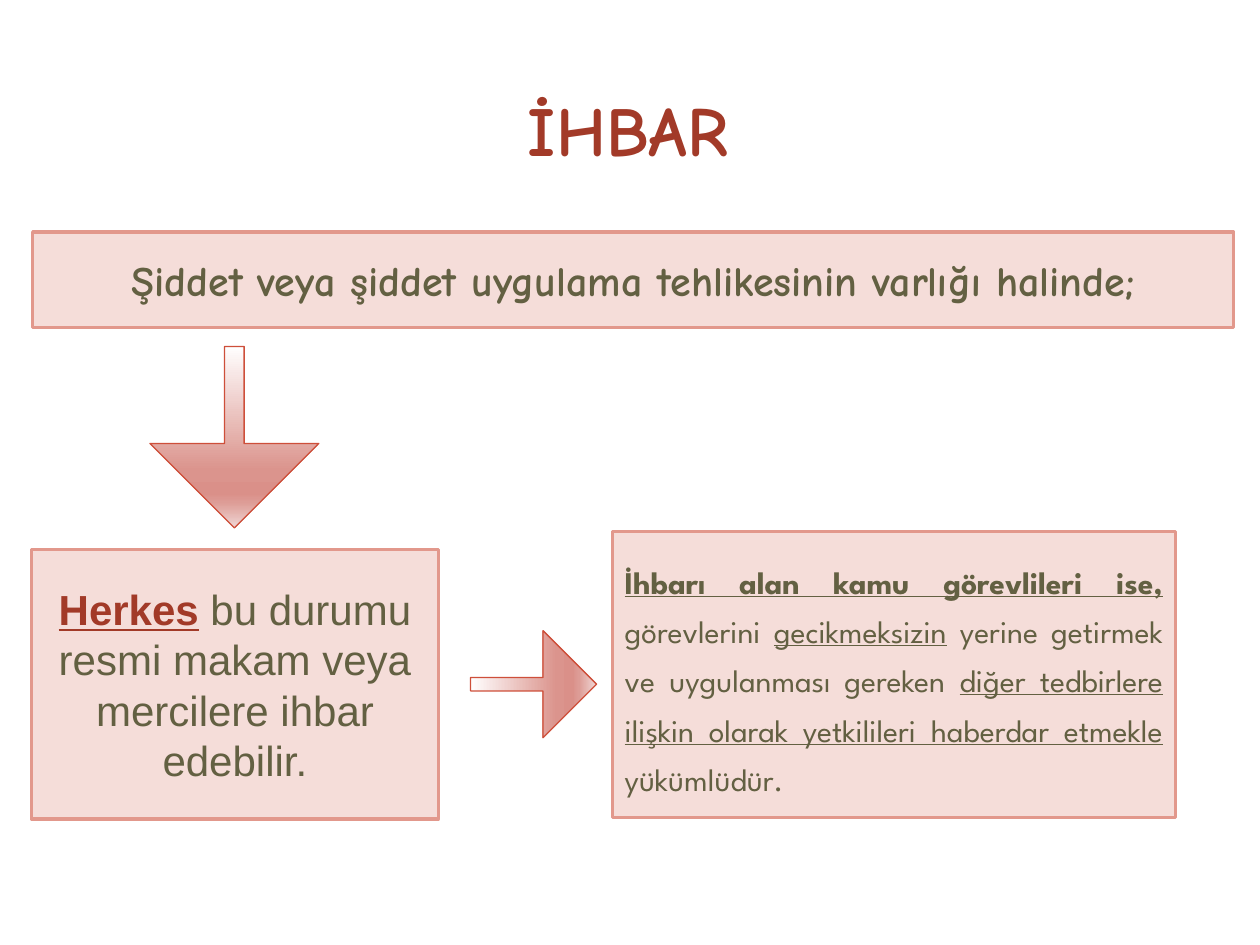
from dataclasses import dataclass

from lxml import etree
from pptx import Presentation
from pptx import util as u
from pptx.dml.color import RGBColor
from pptx.enum import shapes, text
from pptx.oxml.ns import qn

COLS, ROWS = 100, 75  # grid of the slide


@dataclass(frozen=True)
class Theme:
    accent: str = "A23A28"
    ink: str = "636042"
    panel: str = "F5DDD9"
    border: str = "E2988C"
    arrow_line: str = "CE4F3A"
    arrow_stops: tuple = ((0, "FFFEFE"), (68, "DB948D"), (81, "DA9089"),
                          (86, "DD9C96"), (100, "F0D7D5"))
    display: str = "Comic Neue"
    plain: str = "Arial"
    detail: str = "League Spartan"
    title_size: int = 40
    body_size: int = 24
    detail_size: int = 18


THEME = Theme()


@dataclass(frozen=True)
class Box:
    """Column, row, width and height in grid units."""
    x: float
    y: float
    w: float
    h: float

    def emu(self, prs):
        cw, rh = prs.slide_width / COLS, prs.slide_height / ROWS
        return [round(v) for v in (self.x * cw, self.y * rh, self.w * cw, self.h * rh)]


def rgb(value):
    return RGBColor.from_string(value)


def style(font, name, size, color, bold=None):
    font.name, font.size, font.bold = name, u.Pt(size), bold
    font.color.rgb = rgb(color)


def add_title(prs, slide, box, words):
    sp = slide.shapes.title
    sp.left, sp.top, sp.width, sp.height = box.emu(prs)
    tf = sp.text_frame
    tf.text = words
    tf.vertical_anchor = text.MSO_ANCHOR.MIDDLE
    p = tf.paragraphs[0]
    p.alignment = text.PP_ALIGN.CENTER
    style(p.font, THEME.display, THEME.title_size, THEME.accent, True)


def add_panel(prs, slide, box, runs, font, size, align=text.PP_ALIGN.CENTER,
              spacing=None):
    """Bordered panel; each run is its words and a dict of font overrides."""
    sp = slide.shapes.add_shape(shapes.MSO_SHAPE.RECTANGLE, *box.emu(prs))
    sp.shadow.inherit = False
    sp.fill.solid()
    sp.fill.fore_color.rgb = rgb(THEME.panel)
    sp.line.color.rgb = rgb(THEME.border)
    sp.line.width = u.Pt(2)
    tf = sp.text_frame
    tf.word_wrap = True
    tf.vertical_anchor = text.MSO_ANCHOR.MIDDLE
    p = tf.paragraphs[0]
    p.alignment, p.line_spacing = align, spacing
    style(p.font, font, size, THEME.ink)
    for words, look in runs:
        r = p.add_run()
        r.text = words
        style(r.font, font, size, look.get("color", THEME.ink), look.get("bold", False))
        r.font.underline = look.get("underline", False)


def add_arrow(prs, slide, box, shaft, rotation=0):
    sp = slide.shapes.add_shape(shapes.MSO_SHAPE.DOWN_ARROW, *box.emu(prs))
    sp.shadow.inherit = False
    sp.adjustments[0], sp.adjustments[1] = shaft, 0.5
    sp.rotation = rotation
    sp.line.color.rgb = rgb(THEME.arrow_line)
    sp.line.width = u.Pt(0.75)
    sp.fill.gradient()
    sp.fill.gradient_angle = 270
    stops = sp.element.spPr.find(".//" + qn("a:gsLst"))
    for old in list(stops):
        stops.remove(old)
    for share, color in THEME.arrow_stops:
        stop = etree.SubElement(stops, qn("a:gs"), pos=str(share * 1000))
        etree.SubElement(stop, qn("a:srgbClr"), val=color)


def build_slide(prs):
    slide = prs.slides.add_slide(prs.slide_layouts[5])
    strong = {"bold": True, "underline": True}
    under = {"underline": True}

    add_title(prs, slide, Box(4.7, 4.5, 90.3, 11.4), "İHBAR")
    add_panel(prs, slide, Box(2.6, 18.4, 95.3, 7.6),
              [("Şiddet veya şiddet uygulama tehlikesinin varlığı halinde;",
                {"bold": True})],
              THEME.display, THEME.body_size)
    add_panel(prs, slide, Box(2.5, 43.6, 32.3, 21.4),
              [("Herkes", {**strong, "color": THEME.accent}),
               (" bu durumu resmi makam veya mercilere ihbar edebilir.", {})],
              THEME.plain, THEME.body_size)
    add_panel(prs, slide, Box(48.6, 42.2, 44.7, 22.7),
              [("İhbarı alan kamu görevlileri ise, ", strong),
               ("görevlerini ", {}),
               ("gecikmeksizin", under),
               (" yerine getirmek ve uygulanması gereken ", {}),
               ("diğer tedbirlere ilişkin olarak yetkilileri haberdar etmekle", under),
               (" yükümlüdür.", {})],
              THEME.detail, THEME.detail_size, text.PP_ALIGN.JUSTIFY, 1.3)
    add_arrow(prs, slide, Box(38.1, 49.3, 8.5, 10), 0.125, rotation=270)
    add_arrow(prs, slide, Box(11.9, 27.5, 13.4, 14.4), 0.116)


def main():
    prs = Presentation()
    prs.slide_width, prs.slide_height = u.Inches(10), u.Inches(7.5)
    build_slide(prs)
    prs.save("out.pptx")


if __name__ == "__main__":
    main()
